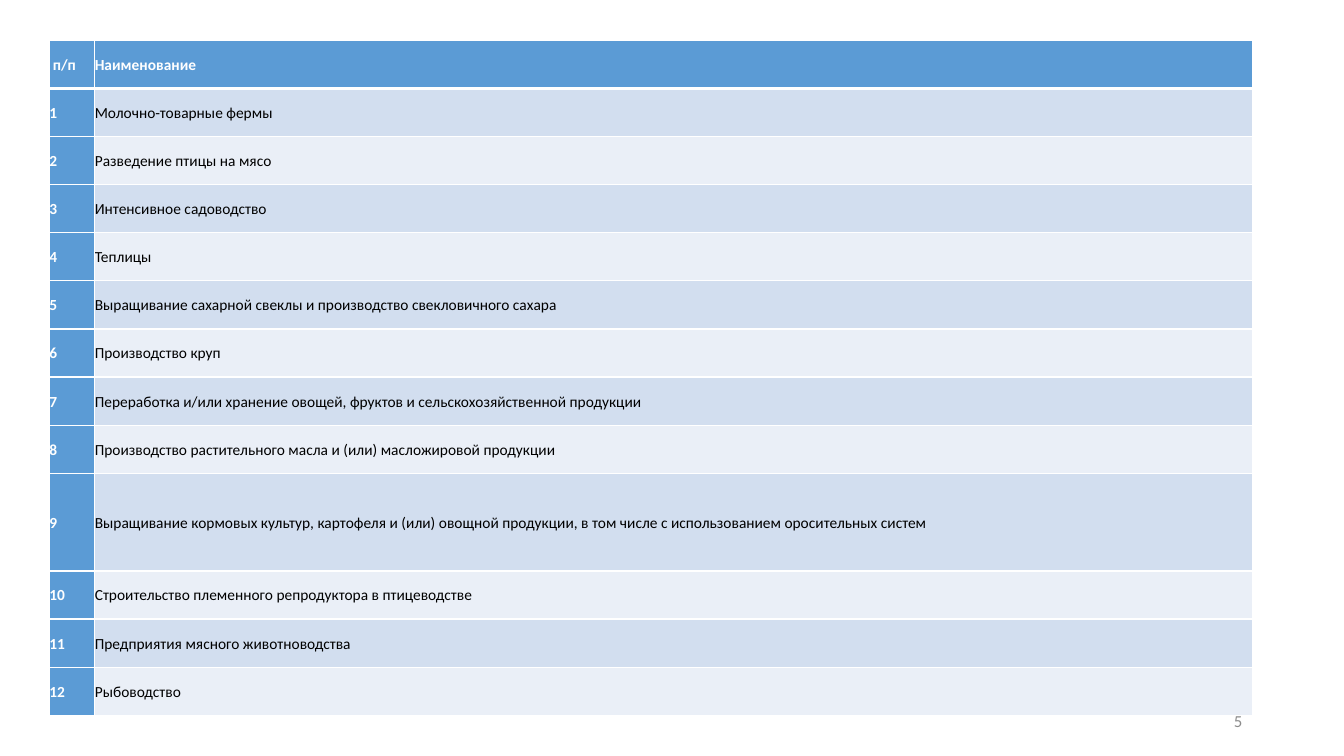
from lxml import etree
from pptx import Presentation
from pptx.dml.color import RGBColor
from pptx.enum.text import MSO_ANCHOR, PP_ALIGN
from pptx.oxml.ns import qn
from pptx.util import Inches, Pt

MIDDLE = MSO_ANCHOR.MIDDLE
RIGHT = PP_ALIGN.RIGHT

COLORS = {
    "head": "5B9BD5",
    "odd": "D2DEEF",
    "even": "EAEFF7",
    "white": "FFFFFF",
    "black": "000000",
    "gray": "8C8C8C",
}

ITEMS = [
    "Молочно-товарные фермы",
    "Разведение птицы на мясо",
    "Интенсивное садоводство",
    "Теплицы",
    "Выращивание сахарной свеклы и производство свекловичного сахара",
    "Производство круп",
    "Переработка и/или хранение овощей, фруктов и сельскохозяйственной продукции",
    "Производство растительного масла и (или) масложировой продукции",
    "Выращивание кормовых культур, картофеля и (или) овощной продукции, "
    "в том числе с использованием оросительных систем",
    "Строительство племенного репродуктора в птицеводстве",
    "Предприятия мясного животноводства",
    "Рыбоводство",
]


class Deck:
    font = "Calibri"
    size = 11
    cell_format = {"margin_left": 0, "margin_top": 0, "margin_right": 0,
                   "margin_bottom": 0, "vertical_anchor": MIDDLE}
    para_format = {"line_spacing": 1.07, "space_after": Pt(8)}

    def __init__(self, slide):
        self.slide = slide

    def apply(self, target, values):
        for name, value in values.items():
            setattr(target, name, value)

    def add_text(self, para, text, color, size, bold=False):
        run = para.add_run()
        run.text = text
        self.apply(run.font, {"name": self.font, "size": Pt(size), "bold": bold})
        run.font.color.rgb = RGBColor.from_string(COLORS[color])

    def border(self, cell, widths):
        props = cell._tc.get_or_add_tcPr()
        for side, width in widths.items():
            line = etree.SubElement(props, qn(f"a:ln{side}"), w=str(Pt(width)))
            fill = etree.SubElement(line, qn("a:solidFill"))
            etree.SubElement(fill, qn("a:srgbClr"), val=COLORS["white"])

    def cell(self, cell, text, fill, color, bold, widths):
        self.apply(cell, self.cell_format)
        self.border(cell, widths)
        cell.fill.solid()
        cell.fill.fore_color.rgb = RGBColor.from_string(COLORS[fill])
        para = cell.text_frame.paragraphs[0]
        self.apply(para, self.para_format)
        self.add_text(para, text, color, self.size, bold)

    def table(self, rows, box, cols, heights):
        frame = self.slide.shapes.add_table(len(rows), len(cols), *map(Inches, box))
        table = frame.table
        self.apply(table, {"horz_banding": False, "first_col": True})
        for col, width in zip(table.columns, cols):
            col.width = Inches(width)
        for r, (row, height) in enumerate(zip(rows, heights)):
            table.rows[r].height = Inches(height)
            # A thick rule parts the header from the body
            widths = {"L": 1, "R": 1, "T": 3 if r == 1 else 1, "B": 3 if r == 0 else 1}
            for c, text in enumerate(row):
                key = r == 0 or c == 0
                fill = "head" if key else "odd" if r % 2 else "even"
                color = "white" if key else "black"
                self.cell(table.cell(r, c), text, fill, color, key, widths)

    def label(self, text, box, color, size):
        frame = self.slide.shapes.add_textbox(*map(Inches, box)).text_frame
        self.apply(frame, {"word_wrap": True, "vertical_anchor": MIDDLE})
        para = frame.paragraphs[0]
        para.alignment = RIGHT
        self.add_text(para, text, color, size)


def main():
    prs = Presentation()
    prs.slide_width, prs.slide_height = Inches(13.33), Inches(7.5)
    deck = Deck(prs.slides.add_slide(prs.slide_layouts[6]))

    # Numbered list of activities, with row 9 taller than the rest
    rows = [(" п/п", "Наименование")]
    rows += [(str(n), item) for n, item in enumerate(ITEMS, 1)]
    total, tall = 6.7, 0.97
    step = (total - tall) / len(ITEMS)
    heights = [tall if r == 9 else step for r in range(len(rows))]
    deck.table(rows, (0.49, 0.4, 11.92, total), (0.45, 11.48), heights)

    # Page number
    deck.label("5", (9.42, 6.95, 3, 0.4), "gray", 12)

    prs.save("out.pptx")


if __name__ == "__main__":
    main()
